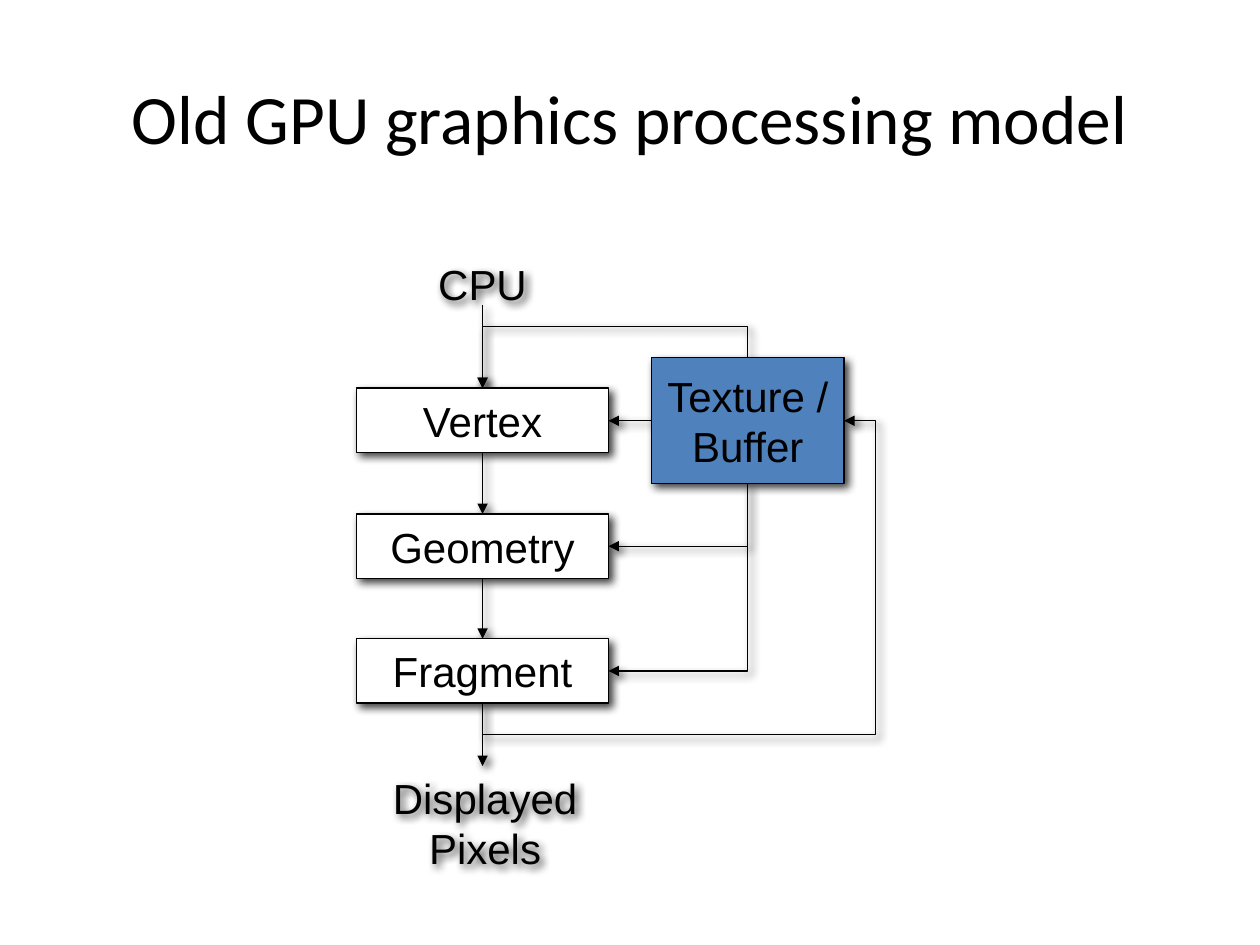
from dataclasses import dataclass

import pptx
import pptx.dml.color
import pptx.enum.shapes
import pptx.enum.text
import pptx.oxml
import pptx.oxml.ns
import pptx.shapes.base
import pptx.shapes.connector
import pptx.slide
import pptx.text.text
import pptx.util

Inches = pptx.util.Inches
Pt = pptx.util.Pt
RGBColor = pptx.dml.color.RGBColor
ConnectorType = pptx.enum.shapes.MSO_CONNECTOR

BLACK = RGBColor(0x00, 0x00, 0x00)
WHITE = RGBColor(0xFF, 0xFF, 0xFF)
BLUE = RGBColor(0x4F, 0x81, 0xBD)

LABEL_FONT = {"name": "Arial", "size": Pt(24)}
TITLE_FONT = {"name": "Calibri", "size": Pt(39.6)}
LABEL_FRAME = {
    "word_wrap": False,
    "auto_size": pptx.enum.text.MSO_AUTO_SIZE.SHAPE_TO_FIT_TEXT,
    "vertical_anchor": pptx.enum.text.MSO_ANCHOR.TOP,
    "margin_left": 0,
    "margin_right": 0,
}
BOX_FRAME = {"word_wrap": True, "vertical_anchor": pptx.enum.text.MSO_ANCHOR.MIDDLE}
NAMESPACE = pptx.oxml.ns.nsdecls("a")
SHADOW_XML = (
    f'<a:effectLst {NAMESPACE}><a:outerShdw blurRad="{Pt(5)}" dist="{Pt(3)}" '
    'dir="2700000" algn="ctr" rotWithShape="0"><a:srgbClr val="000000">'
    '<a:alpha val="75000"/></a:srgbClr></a:outerShdw></a:effectLst>'
)

STAGE_X, STAGE_WIDTH, STAGE_HEIGHT = 2.83, 2, 0.51
FLOW_X = STAGE_X + STAGE_WIDTH / 2
STAGE_RIGHT = STAGE_X + STAGE_WIDTH
TEXTURE_X, TEXTURE_Y, TEXTURE_WIDTH, TEXTURE_HEIGHT = 5.17, 2.84, 1.53, 1
TEXTURE_CENTER = TEXTURE_X + TEXTURE_WIDTH / 2
TEXTURE_MIDDLE = TEXTURE_Y + TEXTURE_HEIGHT / 2
TEXTURE_BOTTOM = TEXTURE_Y + TEXTURE_HEIGHT
TEXTURE_RIGHT = TEXTURE_X + TEXTURE_WIDTH
CLEARANCE = 0.25


@dataclass
class Node:
    text: str
    left: float
    top: float
    width: float
    height: float
    fill: RGBColor | None = None


@dataclass
class Arrow:
    start: tuple[float, float]
    end: tuple[float, float]


@dataclass
class Elbow(Arrow):
    """An arrow that leaves vertically; adjustments are fractions of its extent."""
    preset: str = "bentConnector2"
    adjustments: tuple[float, ...] = ()


STAGES = [
    Node(name, STAGE_X, top, STAGE_WIDTH, STAGE_HEIGHT, WHITE)
    for name, top in (("Vertex", 3.08), ("Geometry", 4.08), ("Fragment", 5.07))
]
TEXTURE = Node("Texture /\nBuffer", TEXTURE_X, TEXTURE_Y, TEXTURE_WIDTH, TEXTURE_HEIGHT, BLUE)
LABELS = [
    Node("CPU", 3.38, 2, 0.9, 0.5),
    Node("Displayed\nPixels", 3.02, 6.08, 1.66, 0.9),
]
VERTEX_TOP = STAGES[0].top
FRAGMENT_BOTTOM = STAGES[-1].top + STAGE_HEIGHT

flow_starts = [2.42] + [stage.top + STAGE_HEIGHT for stage in STAGES]
flow_ends = [stage.top for stage in STAGES] + [6.08]
ARROWS = [
    Arrow((FLOW_X, top), (FLOW_X, bottom))
    for top, bottom in zip(flow_starts, flow_ends)
] + [Arrow((TEXTURE_X, TEXTURE_MIDDLE), (STAGE_RIGHT, TEXTURE_MIDDLE))]

TEXTURE_READS = [
    Elbow((TEXTURE_CENTER, TEXTURE_BOTTOM), (STAGE_RIGHT, stage.top + STAGE_HEIGHT / 2))
    for stage in STAGES[1:]
]
FEEDBACK = Elbow(
    (FLOW_X, FRAGMENT_BOTTOM), (TEXTURE_RIGHT, TEXTURE_MIDDLE), "bentConnector4",
    (-CLEARANCE / (FRAGMENT_BOTTOM - TEXTURE_MIDDLE),
     1 + CLEARANCE / (TEXTURE_RIGHT - FLOW_X)),
)
VERTEX_INPUT = Elbow(
    (TEXTURE_CENTER, TEXTURE_Y), (FLOW_X, VERTEX_TOP), "bentConnector3",
    (-CLEARANCE / (VERTEX_TOP - TEXTURE_Y),),
)


def format_font(font: pptx.text.text.Font, values: dict) -> None:
    for name, value in values.items():
        setattr(font, name, value)
    font.color.rgb = BLACK


def add_shadow(shape: pptx.shapes.base.BaseShape) -> None:
    shape.element.spPr.append(pptx.oxml.parse_xml(SHADOW_XML))


def draw_node(page: pptx.slide.Slide, node: Node) -> None:
    """Draw a filled box, or a plain label when the node has no fill."""
    bounds = [Inches(n) for n in (node.left, node.top, node.width, node.height)]
    if node.fill is None:
        box = page.shapes.add_textbox(*bounds)
    else:
        box = page.shapes.add_shape(pptx.enum.shapes.MSO_SHAPE.RECTANGLE, *bounds)
        box.fill.solid()
        box.fill.fore_color.rgb = node.fill
        box.line.color.rgb = BLACK
        box.line.width = Pt(0.75)
    add_shadow(box)
    frame = box.text_frame
    frame.text = node.text
    for name, value in (BOX_FRAME if node.fill else LABEL_FRAME).items():
        setattr(frame, name, value)
    for para in frame.paragraphs:
        para.alignment = pptx.enum.text.PP_ALIGN.CENTER
        format_font(para.font, LABEL_FONT)


def draw_arrow(
    page: pptx.slide.Slide, arrow: Arrow, kind: ConnectorType = ConnectorType.STRAIGHT
) -> pptx.shapes.connector.Connector:
    ends = [Inches(n) for n in (*arrow.start, *arrow.end)]
    connector = page.shapes.add_connector(kind, *ends)
    connector.line.color.rgb = BLACK
    connector.line.width = Pt(0.75)
    connector.line._get_or_add_ln().append(
        pptx.oxml.parse_xml(f'<a:tailEnd {NAMESPACE} type="triangle"/>')
    )
    add_shadow(connector)
    return connector


def draw_elbow(page: pptx.slide.Slide, elbow: Elbow) -> None:
    """Turn an elbow a quarter so that its first segment runs vertically."""
    connector = draw_arrow(page, elbow, ConnectorType.ELBOW)
    (x1, y1), (x2, y2) = elbow.start, elbow.end
    width, height = abs(y2 - y1), abs(x2 - x1)
    connector.left = Inches((x1 + x2 - width) / 2)
    connector.top = Inches((y1 + y2 - height) / 2)
    connector.width, connector.height = Inches(width), Inches(height)
    properties = connector.element.spPr
    transform = properties.find(pptx.oxml.ns.qn("a:xfrm"))
    transform.set("rot", "5400000")
    transform.set("flipH", str(int(y2 < y1)))
    transform.set("flipV", str(int(x2 > x1)))
    guides = "".join(
        f'<a:gd name="adj{number}" fmla="val {round(value * 100000)}"/>'
        for number, value in enumerate(elbow.adjustments, 1)
    )
    geometry = pptx.oxml.parse_xml(
        f'<a:prstGeom {NAMESPACE} prst="{elbow.preset}"><a:avLst>{guides}</a:avLst></a:prstGeom>'
    )
    properties.replace(properties.find(pptx.oxml.ns.qn("a:prstGeom")), geometry)


def add_title(page: pptx.slide.Slide, text: str) -> None:
    title = page.shapes.title
    title.left, title.top = Inches(0.5), Inches(0.3)
    title.width, title.height = Inches(9), Inches(1.25)
    title.text_frame.text = text
    title.text_frame.vertical_anchor = pptx.enum.text.MSO_ANCHOR.MIDDLE
    para = title.text_frame.paragraphs[0]
    para.alignment = pptx.enum.text.PP_ALIGN.CENTER
    format_font(para.font, TITLE_FONT)


def main() -> None:
    deck = pptx.Presentation()
    deck.slide_width, deck.slide_height = Inches(10), Inches(7.5)
    page = deck.slides.add_slide(deck.slide_layouts.get_by_name("Title Only"))
    add_title(page, "Old GPU graphics processing model")
    for arrow in ARROWS:
        draw_arrow(page, arrow)
    for elbow in (*TEXTURE_READS, FEEDBACK, VERTEX_INPUT):
        draw_elbow(page, elbow)
    for node in (TEXTURE, *STAGES, *LABELS):
        draw_node(page, node)
    deck.save("out.pptx")


if __name__ == "__main__":
    main()
